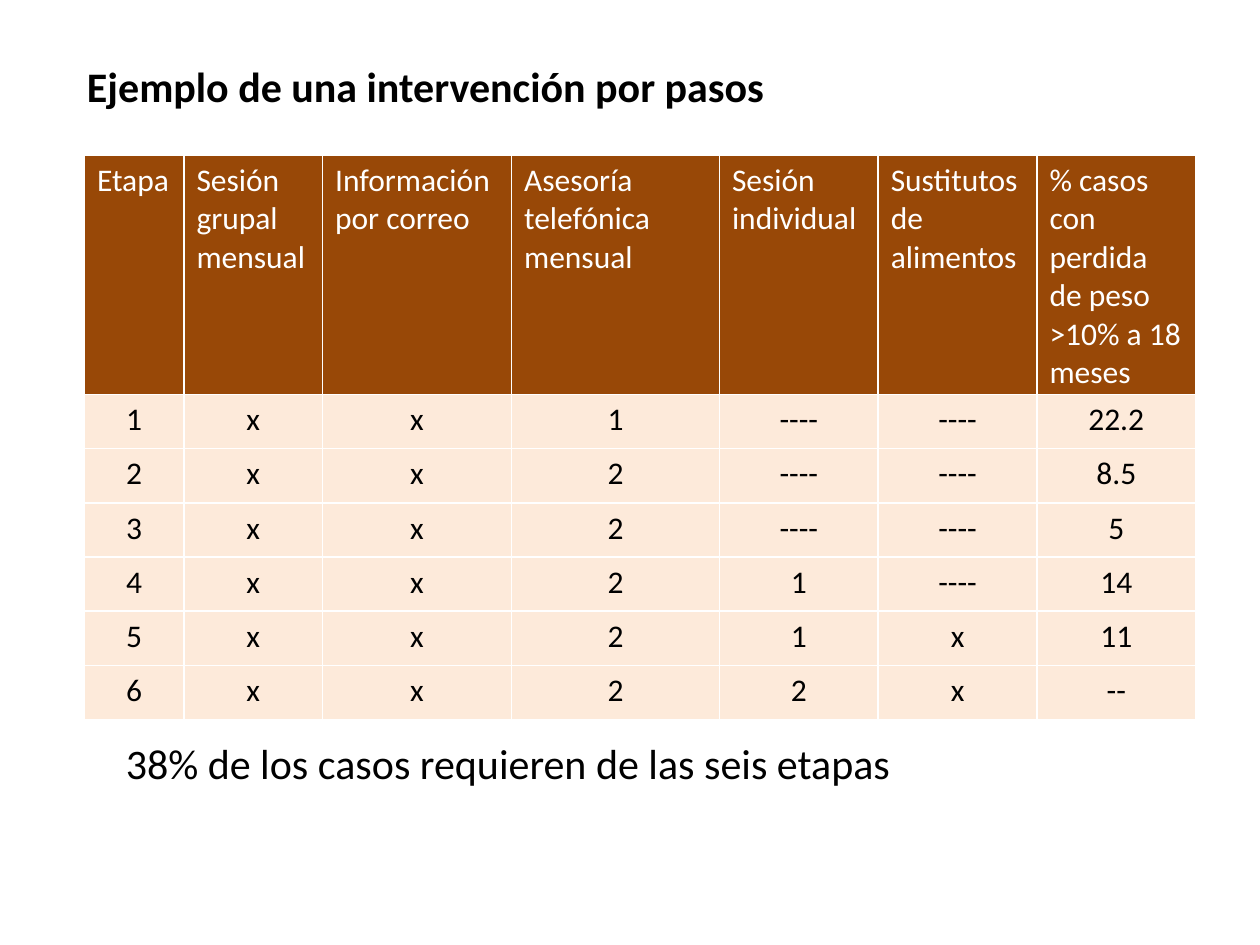
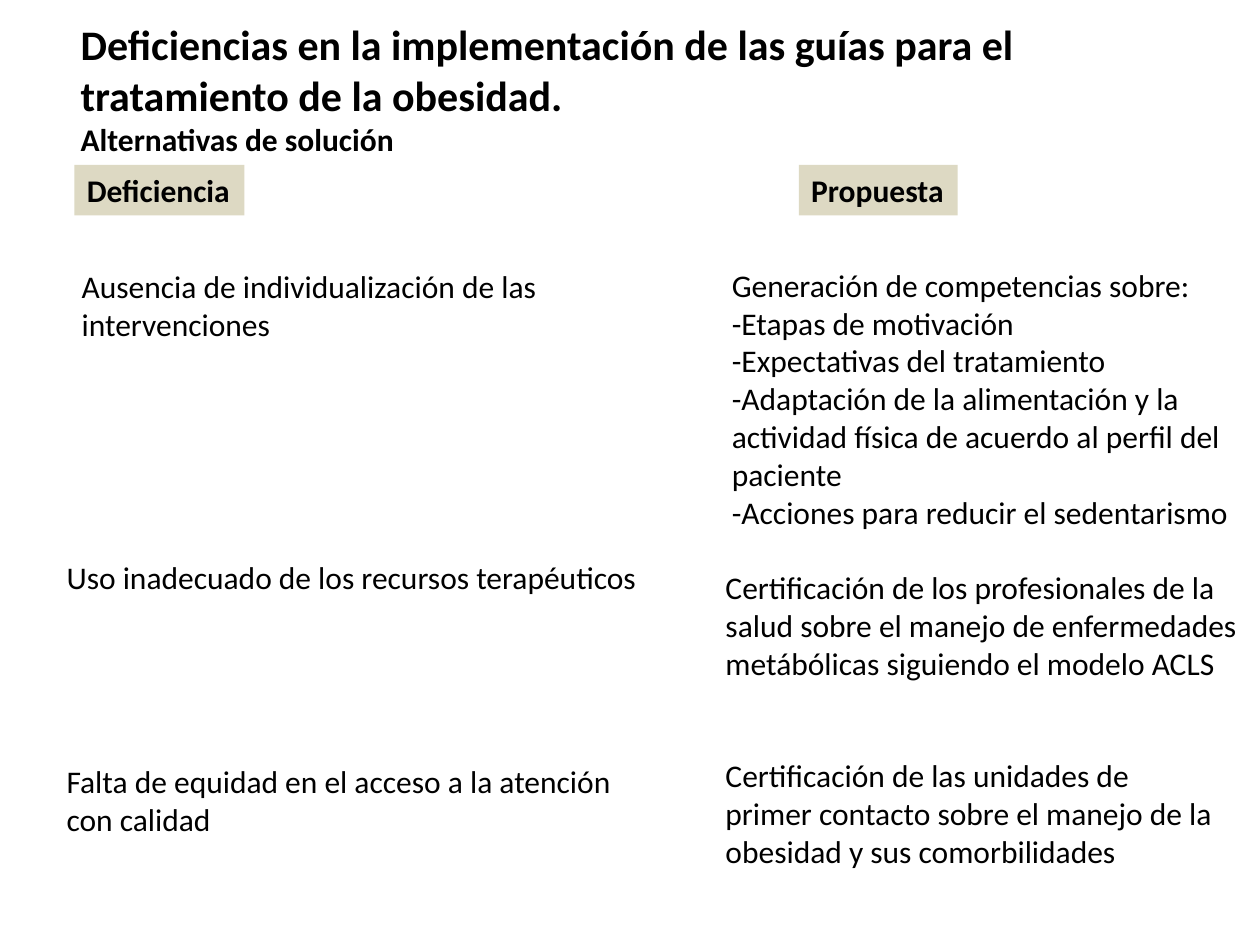
from pptx import Presentation
from pptx.dml.color import RGBColor
from pptx.enum import shapes, text
from pptx.util import Inches, Pt

FONT = "Calibri"
BLACK, WHITE = "000000", "FFFFFF"
BROWN, PEACH, SAND = "984807", "FDEADA", "DDD9C3"
TITLE_SIZE, BODY_SIZE = 24, 18

COLUMN_WIDTHS = [0.79, 1.1, 1.5, 1.65, 1.26, 1.26, 1.26]
HEADER_HEIGHT, ROW_HEIGHT = 1.9, 0.43
STAGES = [
    ["Etapa", "Sesión grupal mensual", "Información por correo", "Asesoría telefónica mensual",
     "Sesión individual", "Sustitutos de alimentos", "% casos con perdida de peso >10% a 18 meses"],
    ["1", "x", "x", "1", "----", "----", "22.2"],
    ["2", "x", "x", "2", "----", "----", "8.5"],
    ["3", "x", "x", "2", "----", "----", "5"],
    ["4", "x", "x", "2", "1", "----", "14"],
    ["5", "x", "x", "2", "1", "x", "11"],
    ["6", "x", "x", "2", "2", "x", "--"],
]

COLUMN_LABELS = [
    ((0.59, 1.31, 1.35, 0.4), "Deficiencia"),
    ((6.34, 1.31, 1.26, 0.4), "Propuesta"),
]
STATEMENTS = [
    ((0.55, 2.07, 4.37, 0.71), ["Ausencia de individualización de las intervenciones"], True),
    ((5.71, 2.06, 4.33, 2.22), [
        "Generación de competencias sobre:",
        "-Etapas de motivación",
        "-Expectativas del tratamiento",
        "-Adaptación de la alimentación y la actividad física de acuerdo al perfil del paciente",
        "-Acciones para reducir el sedentarismo"], True),
    ((0.43, 4.38, 4.78, 0.4), ["Uso inadecuado de los recursos terapéuticos"], False),
    ((5.66, 4.46, 4.33, 1.01), [
        "Certificación de los profesionales de la salud sobre el manejo de enfermedades "
        "metábólicas siguiendo el modelo ACLS"], True),
    ((0.43, 6, 4.72, 0.71), ["Falta de equidad en el acceso a la atención con calidad"], True),
    ((5.66, 5.95, 4.06, 1.01), [
        "Certificación de las unidades de primer contacto sobre el manejo de la obesidad "
        "y sus comorbilidades"], True),
]


def color(hex_value):
    """Return the colour for a hex string."""
    return RGBColor.from_string(hex_value)


def inches(box):
    """Convert left, top, width and height to lengths."""
    return [Inches(value) for value in box]


def style_paragraph(paragraph, size=BODY_SIZE, bold=False, hex_value=BLACK,
                    align=text.PP_ALIGN.LEFT):
    """Set alignment and font of one paragraph."""
    paragraph.alignment = align
    font = paragraph.font
    font.name, font.size, font.bold = FONT, Pt(size), bold
    font.color.rgb = color(hex_value)


def fill_text(shape, lines, size=BODY_SIZE, bold=False, wrap=True):
    """Write lines into a shape, anchored at its top."""
    frame = shape.text_frame
    frame.text = "\n".join(lines)
    frame.word_wrap = wrap
    frame.auto_size = text.MSO_AUTO_SIZE.SHAPE_TO_FIT_TEXT
    frame.vertical_anchor = text.MSO_ANCHOR.TOP
    for paragraph in frame.paragraphs:
        style_paragraph(paragraph, size, bold)


def add_titled_slide(presentation, box, lines, wrap=True):
    """Add a title-only slide with a bold title and optional smaller subtitle."""
    slide = presentation.slides.add_slide(presentation.slide_layouts[5])
    title = slide.shapes.title
    title.left, title.top, title.width, title.height = inches(box)
    fill_text(title, lines, TITLE_SIZE, True, wrap)
    for subtitle in title.text_frame.paragraphs[1:]:
        subtitle.font.size = Pt(BODY_SIZE)
    return slide


def add_text(slide, box, lines, size=BODY_SIZE, wrap=True):
    """Add a plain text box."""
    fill_text(slide.shapes.add_textbox(*inches(box)), lines, size, wrap=wrap)


def add_label(slide, box, label):
    """Add a sand-coloured column label."""
    shape = slide.shapes.add_shape(shapes.MSO_SHAPE.RECTANGLE, *inches(box))
    shape.shadow.inherit = False
    shape.fill.solid()
    shape.fill.fore_color.rgb = color(SAND)
    shape.line.fill.background()
    fill_text(shape, [label], bold=True, wrap=False)


def add_stage_table(slide, left, top):
    """Add the table of intervention stages."""
    height = HEADER_HEIGHT + ROW_HEIGHT * (len(STAGES) - 1)
    box = inches((left, top, sum(COLUMN_WIDTHS), height))
    table = slide.shapes.add_table(len(STAGES), len(COLUMN_WIDTHS), *box).table
    table.horz_banding = False
    for column, width in zip(table.columns, COLUMN_WIDTHS):
        column.width = Inches(width)
    for row_index, values in enumerate(STAGES):
        header = row_index == 0
        table.rows[row_index].height = Inches(HEADER_HEIGHT if header else ROW_HEIGHT)
        for cell, value in zip(table.rows[row_index].cells, values):
            cell.text = value
            cell.fill.solid()
            cell.fill.fore_color.rgb = color(BROWN if header else PEACH)
            style_paragraph(cell.text_frame.paragraphs[0],
                            hex_value=WHITE if header else BLACK,
                            align=text.PP_ALIGN.LEFT if header else text.PP_ALIGN.CENTER)


def build_stages_slide(presentation):
    """Build the slide with the stepped intervention."""
    slide = add_titled_slide(presentation, (0.59, 0.43, 5.63, 0.5),
                             ["Ejemplo de una intervención por pasos"], wrap=False)
    add_stage_table(slide, 0.67, 1.23)
    add_text(slide, (0.9, 5.8, 6.33, 0.51),
             ["38% de los casos requieren de las seis etapas"], TITLE_SIZE, wrap=False)


def build_proposals_slide(presentation):
    """Build the slide with deficiencies and proposals."""
    slide = add_titled_slide(presentation, (0.54, 0.1, 8.86, 1.21), [
        "Deficiencias en la implementación de las guías para el tratamiento de la obesidad.",
        "Alternativas de solución"])
    for box, label in COLUMN_LABELS:
        add_label(slide, box, label)
    for box, lines, wrap in STATEMENTS:
        add_text(slide, box, lines, wrap=wrap)


def main():
    """Build and save the presentation."""
    presentation = Presentation()
    presentation.slide_width, presentation.slide_height = Inches(10), Inches(7.5)
    build_stages_slide(presentation)
    build_proposals_slide(presentation)
    presentation.save("out.pptx")


if __name__ == "__main__":
    main()
